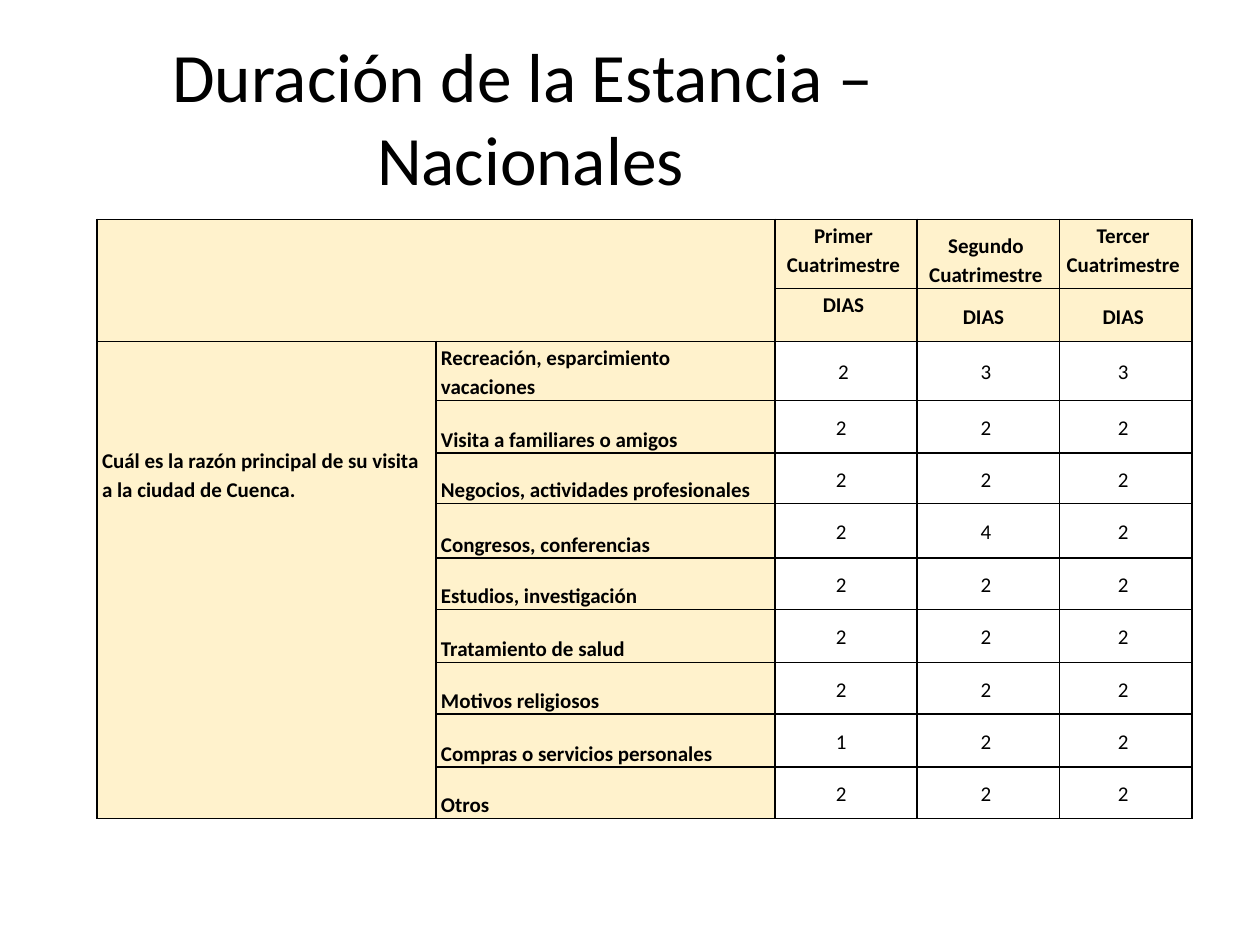
from lxml import etree
from pptx import Presentation
from pptx.dml.color import RGBColor
from pptx.enum import text as t
from pptx.oxml import ns
from pptx.util import Inches, Pt

INK = {"text": "000000", "line": "000000", "head": "FFF2CC"}
TOP, MID, LOW = t.MSO_ANCHOR.TOP, t.MSO_ANCHOR.MIDDLE, t.MSO_ANCHOR.BOTTOM
LEFT, CENTER = t.PP_ALIGN.LEFT, t.PP_ALIGN.CENTER

COLS = [2.69, 2.69, 1.13, 1.13, 1.05]
ROWS = [0.55, 0.42, 0.41, 0.42, 0.4, 0.43, 0.41, 0.42, 0.41, 0.42, 0.41]
HEADS = [
    [("Primer Cuatrimestre", TOP), ("Segundo Cuatrimestre", LOW), ("Tercer Cuatrimestre", TOP)],
    [("DIAS", TOP), ("DIAS ", MID), ("DIAS", MID)],
]
ASK = "Cuál es la razón principal de su visita a la ciudad de Cuenca."
STAYS = [
    ("Recreación, esparcimiento vacaciones", "2", "3", "3"),
    ("Visita a familiares o amigos", "2 ", "2", "2"),
    ("Negocios, actividades profesionales", "2 ", "2", "2"),
    ("Congresos, conferencias", "2 ", "4", "2"),
    ("Estudios, investigación", "2 ", "2", "2"),
    ("Tratamiento de salud", "2 ", "2", "2"),
    ("Motivos religiosos", "2 ", "2", "2"),
    ("Compras o servicios personales", "1 ", "2", "2"),
    ("Otros", "2 ", "2", "2"),
]
SPLIT = 5  # first row of the lower merged cell in the question column


def put(item, **values):
    for name, value in values.items():
        setattr(item, name, value)


def style(par, size, bold=False):
    for run in par.runs:
        put(run.font, name="Calibri", size=Pt(size), bold=bold)
        run.font.color.rgb = RGBColor.from_string(INK["text"])


def edge(cell, side, show):
    """Draw one cell border, or blank it out when show is false."""
    line = etree.SubElement(cell._tc.get_or_add_tcPr(), ns.qn("a:ln" + side), w=str(Pt(1)))
    if show:
        fill = etree.SubElement(line, ns.qn("a:solidFill"))
        etree.SubElement(fill, ns.qn("a:srgbClr"), val=INK["line"])
    else:
        etree.SubElement(line, ns.qn("a:noFill"))


def frame(cell, row, col):
    """Give a cell its borders and fill; no border crosses the question column."""
    ask = col == 0 and row >= 2
    hide = {"T": ask and row >= SPLIT, "B": ask and row < SPLIT}
    for side in "LRTB":
        edge(cell, side, not hide.get(side, False))
    if row < 2 or col < 2:
        cell.fill.solid()
        cell.fill.fore_color.rgb = RGBColor.from_string(INK["head"])
    else:
        cell.fill.background()
    put(cell, margin_left=Inches(0.04), margin_right=Inches(0.08), margin_top=0, margin_bottom=0)


def write(cell, words, anchor, align, bold=True):
    cell.text = words
    cell.vertical_anchor = anchor
    par = cell.text_frame.paragraphs[0]
    put(par, alignment=align, line_spacing=1.15)
    style(par, 12, bold)


def add_title(slide, x, y, w, h):
    title = slide.shapes.title
    put(title, left=Inches(x), top=Inches(y), width=Inches(w), height=Inches(h))
    box = title.text_frame
    box.text = "Duración de la Estancia – \vNacionales"
    put(box, vertical_anchor=MID, word_wrap=True, auto_size=t.MSO_AUTO_SIZE.NONE)
    box.paragraphs[0].alignment = CENTER
    style(box.paragraphs[0], 39.6)


def add_stays(slide, x, y, w, h):
    grid = slide.shapes.add_table(
        len(ROWS), len(COLS), Inches(x), Inches(y), Inches(w), Inches(h)).table
    put(grid, first_row=False, horz_banding=False)
    for col, wide in zip(grid.columns, COLS):
        col.width = Inches(wide)
    for row, high in zip(grid.rows, ROWS):
        row.height = Inches(high)
    for r in range(len(ROWS)):
        for c in range(len(COLS)):
            frame(grid.cell(r, c), r, c)

    grid.cell(0, 0).merge(grid.cell(1, 1))
    grid.cell(2, 0).merge(grid.cell(SPLIT - 1, 0))
    grid.cell(SPLIT, 0).merge(grid.cell(len(ROWS) - 1, 0))

    for r, heads in enumerate(HEADS):
        for c, (words, anchor) in enumerate(heads, 2):
            write(grid.cell(r, c), words, anchor, CENTER)
    write(grid.cell(2, 0), ASK, LOW, LEFT)
    for r, (cause, *days) in enumerate(STAYS, 2):
        write(grid.cell(r, 1), cause, LOW, LEFT)
        for c, count in enumerate(days, 2):
            write(grid.cell(r, c), count, MID, CENTER, bold=False)


def main():
    deck = Presentation()
    put(deck, slide_width=Inches(10), slide_height=Inches(7.5))
    slide = deck.slides.add_slide(deck.slide_layouts[5])
    add_title(slide, -0.29, 0.3, 9, 1.25)
    add_stays(slide, 0.77, 1.74, 8.7, 4.73)
    deck.save("out.pptx")


if __name__ == "__main__":
    main()
